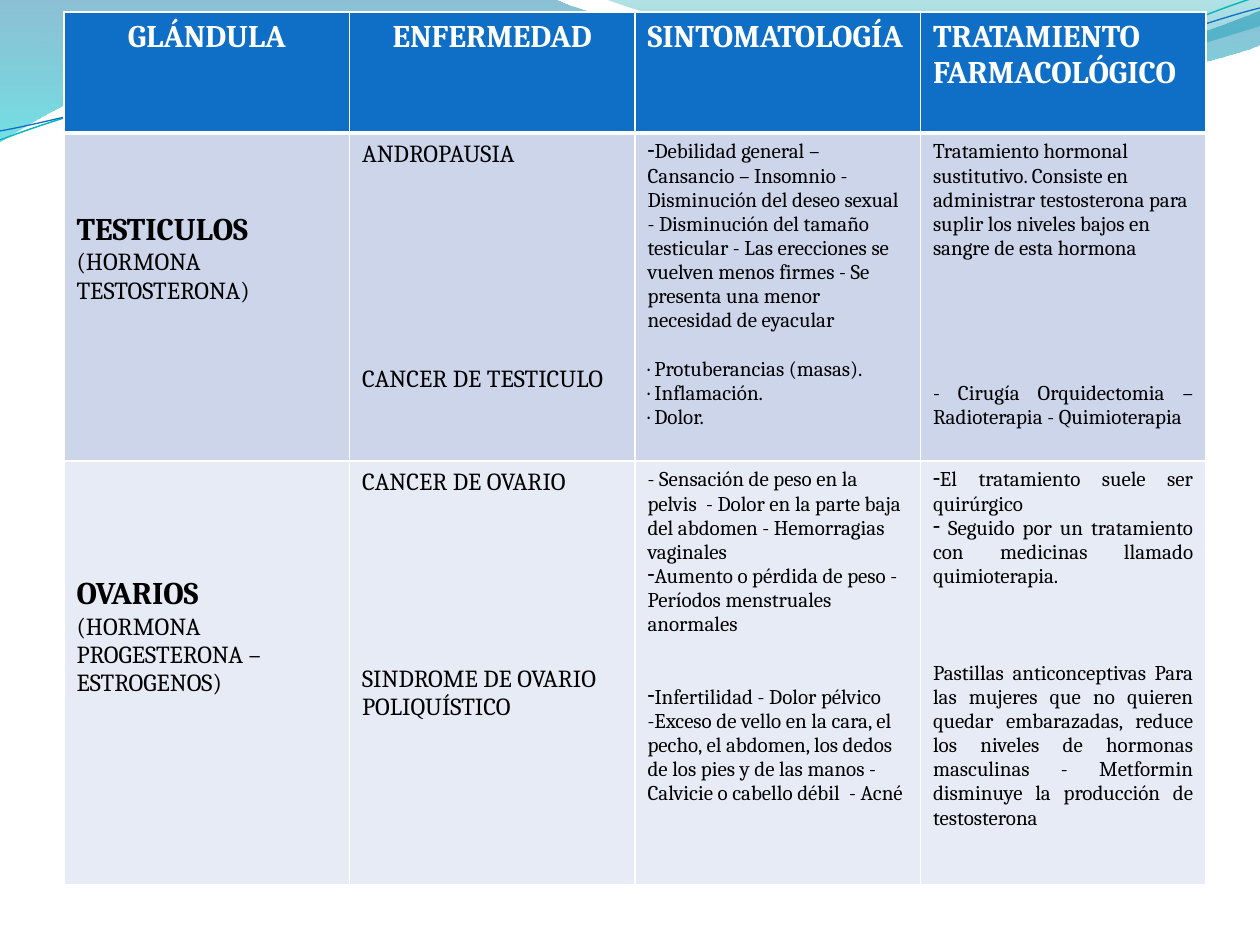
from dataclasses import dataclass

import pptx
import pptx.dml.color
import pptx.enum.text
import pptx.oxml
import pptx.oxml.ns
import pptx.util
from lxml import etree

RGB = pptx.dml.color.RGBColor
ALIGN = pptx.enum.text.PP_ALIGN
qn = pptx.oxml.ns.qn

WHITE = RGB(0xFF, 0xFF, 0xFF)
BLACK = RGB(0x00, 0x00, 0x00)
BLUE = RGB(0x0F, 0x6F, 0xC6)
TEAL = RGB(0x0A, 0xB8, 0xBF)
WAVE_BLUE = RGB(0x00, 0x74, 0xA1)
WAVE_CYAN = RGB(0x00, 0xC6, 0xCF)
CREST_TEAL = RGB(0x00, 0xA1, 0xA9)
CREST_BLUE = RGB(0x00, 0x8B, 0xBF)
ROW_DARK = RGB(0xCC, 0xD5, 0xEA)
ROW_LIGHT = RGB(0xE7, 0xEB, 0xF5)


@dataclass
class Para:
    """A paragraph; gap is the number of empty lines, of its own size, above it."""
    text: str
    size: int = 12
    bold: bool = False
    gap: int = 0
    align: ALIGN = ALIGN.LEFT
    bullet: str = ""
    color: RGB = BLACK


def header(text, align=ALIGN.LEFT):
    return [Para(text, 18, True, align=align, color=WHITE)]


def gland(name, hormone, gap):
    return [Para(name, 18, True, gap), Para(hormone, 14)]


def justified(text, gap=0, bullet=""):
    return Para(text, gap=gap, align=ALIGN.JUSTIFY, bullet=bullet)


class Deck:
    font = "Cambria"
    line_height = 1.15
    cell_top = 7
    scale = 914400 / 126

    def __init__(self, width, height):
        self.prs = pptx.Presentation()
        self.prs.slide_width, self.prs.slide_height = self.px(width), self.px(height)
        self.slide = self.prs.slides.add_slide(self.prs.slide_layouts[6])

    def px(self, value):
        return pptx.util.Emu(round(value * self.scale))

    def freeform(self, start, moves, close):
        """Draw moves from start: one point is a straight line, three are a Bezier curve."""
        points = [(self.px(x), self.px(y)) for move in moves for x, y in move]
        builder = self.slide.shapes.build_freeform(*map(self.px, start), scale=1.0)
        builder.add_line_segments(points, close=close)
        shape = builder.convert_to_shape()
        shape.shadow.inherit = False
        segments = iter(list(shape._element.iter(qn("a:lnTo"))))
        for move in moves:
            group = [next(segments) for _ in move]
            if len(group) == 3:
                curve = etree.Element(qn("a:cubicBezTo"))
                group[0].addprevious(curve)
                for segment in group:
                    curve.append(segment[0])
                    segment.getparent().remove(segment)
        return shape

    def wave(self, start, moves, stops):
        """Filled outline; each stop is (position, colour, opacity percent)."""
        shape = self.freeform(start, moves, True)
        shape.fill.gradient()
        shape.fill.gradient_angle = 270
        for stop, (position, color, _) in zip(shape.fill.gradient_stops, stops):
            stop.position, stop.color.rgb = position, color
        for clr, (_, _, opacity) in zip(shape._element.iter(qn("a:srgbClr")), stops):
            etree.SubElement(clr, qn("a:alpha"), val=str(opacity * 1000))
        shape.line.fill.background()

    def curve(self, start, moves, color, width):
        shape = self.freeform(start, moves, False)
        shape.fill.background()
        shape.line.color.rgb = color
        shape.line.width = pptx.util.Pt(width)

    def table(self, left, top, width, row_heights, rows, fills):
        cols = len(rows[0])
        table = self.slide.shapes.add_table(
            len(rows), cols, self.px(left), self.px(top),
            self.px(width), self.px(sum(row_heights))).table
        table.horz_banding = table.first_row = False
        for column in table.columns:
            column.width = self.px(width / cols)
        for r, (height, row, fill) in enumerate(zip(row_heights, rows, fills)):
            table.rows[r].height = self.px(height)
            for c, paras in enumerate(row):
                cell = table.cell(r, c)
                cell.fill.solid()
                cell.fill.fore_color.rgb = fill
                self.borders(cell, top=3 if r == 1 else 1, bottom=3 if r == 0 else 1)
                self.fill_text(cell, paras)

    def borders(self, cell, top, bottom):
        tc_pr = cell._tc.get_or_add_tcPr()
        widths = {"lnL": 1, "lnR": 1, "lnT": top, "lnB": bottom}
        for i, (tag, width) in enumerate(widths.items()):
            line = etree.Element(qn("a:" + tag), w=str(pptx.util.Pt(width)))
            solid = etree.SubElement(line, qn("a:solidFill"))
            etree.SubElement(solid, qn("a:srgbClr"), val=str(WHITE))
            tc_pr.insert(i, line)

    def fill_text(self, cell, paras):
        frame = cell.text_frame
        cell.margin_top = self.px(self.cell_top) + self.gap_above(paras[0])
        for i, para in enumerate(paras):
            p = frame.add_paragraph() if i else frame.paragraphs[0]
            p.text = para.text
            p.alignment = para.align
            if para.bullet:
                self.add_bullet(p, para.bullet)
            if i and para.gap:
                p.space_before = self.gap_above(para)
            # A bullet takes its size and typeface from the first run.
            font = p.runs[0].font if para.bullet else p.font
            font.name, font.size = self.font, pptx.util.Pt(para.size)
            font.bold, font.color.rgb = para.bold, para.color

    def add_bullet(self, paragraph, char):
        p_pr = paragraph._p.get_or_add_pPr()
        p_pr.set("marL", "0")
        p_pr.set("indent", "0")
        etree.SubElement(p_pr, qn("a:buFontTx"))
        etree.SubElement(p_pr, qn("a:buChar"), char=char)

    def gap_above(self, para):
        return pptx.util.Pt(para.gap * para.size * self.line_height)


ROWS = [
    [header("GLÁNDULA", ALIGN.CENTER), header("ENFERMEDAD", ALIGN.CENTER),
     header("SINTOMATOLOGÍA"), header("TRATAMIENTO FARMACOLÓGICO")],
    [gland("TESTICULOS", "(HORMONA TESTOSTERONA)", 2),
     [Para("ANDROPAUSIA", 14), Para("CANCER DE TESTICULO", 14, gap=7)],
     [Para("Debilidad general – Cansancio – Insomnio - Disminución del deseo sexual - "
           "Disminución del tamaño testicular - Las erecciones se vuelven menos firmes - "
           "Se presenta una menor necesidad de eyacular", bullet="-"),
      Para("· Protuberancias (masas).", gap=1), Para("· Inflamación."), Para("· Dolor.")],
     [Para("Tratamiento hormonal sustitutivo. Consiste en administrar testosterona para "
           "suplir los niveles bajos en sangre de esta hormona"),
      justified("- Cirugía Orquidectomia – Radioterapia - Quimioterapia ", 5)]],
    [gland("OVARIOS", "(HORMONA PROGESTERONA – ESTROGENOS)", 3),
     [Para("CANCER DE OVARIO", 14), Para("SINDROME DE OVARIO POLIQUÍSTICO", 14, gap=6)],
     [Para("- Sensación de peso en la pelvis  - Dolor en la parte baja del abdomen - "
           "Hemorragias vaginales"),
      Para("Aumento o pérdida de peso - Períodos menstruales anormales", bullet="-"),
      Para("Infertilidad - Dolor pélvico -Exceso de vello en la cara, el pecho, el abdomen, "
           "los dedos de los pies y de las manos -  Calvicie o cabello débil  - Acné",
           gap=2, bullet="-")],
     [justified("El tratamiento suele ser quirúrgico ", bullet="-"),
      justified(" Seguido por un tratamiento con medicinas llamado quimioterapia. ", bullet="-"),
      justified("Pastillas anticonceptivas Para las mujeres que no quieren quedar embarazadas, "
                "reduce los niveles de hormonas masculinas - Metformin disminuye la producción "
                "de testosterona", 3)]],
]


def main():
    deck = Deck(1260, 945)
    deck.wave((0, 0), [[(554, -1)],
                       [(600, 21), (837, 79), (955, 79)],
                       [(1074, 79), (1207, 33), (1260, 11)], [(1261, 45)],
                       [(1238, 55), (1096, 96), (940, 95)],
                       [(784, 95), (481, 35), (324, 43)],
                       [(163, 45), (58, 105), (-1, 142)]],
              [(0, WAVE_BLUE, 45), (1, WAVE_CYAN, 55)])
    deck.wave((604, -1), [[(642, 14), (859, 78), (969, 82)],
                          [(1079, 87), (1211, 40), (1260, 26)], [(1260, 0)]],
              [(0, CREST_TEAL, 30), (0.8, CREST_BLUE, 45)])
    deck.curve((0, 140), [[(60, 117), (199, 72), (349, 66)],
                          [(498, 59), (747, 112), (898, 101)],
                          [(1050, 89), (1182, 19), (1257, -3)]], TEAL, 0.85)
    deck.curve((0, 131), [[(59, 121), (207, 77), (357, 71)],
                          [(508, 64), (752, 106), (903, 95)],
                          [(1053, 84), (1186, 26), (1260, 8)]], BLUE, 0.75)
    deck.table(64, 12, 1142, [121, 328, 424], ROWS, [BLUE, ROW_DARK, ROW_LIGHT])
    deck.prs.save("out.pptx")


if __name__ == "__main__":
    main()
